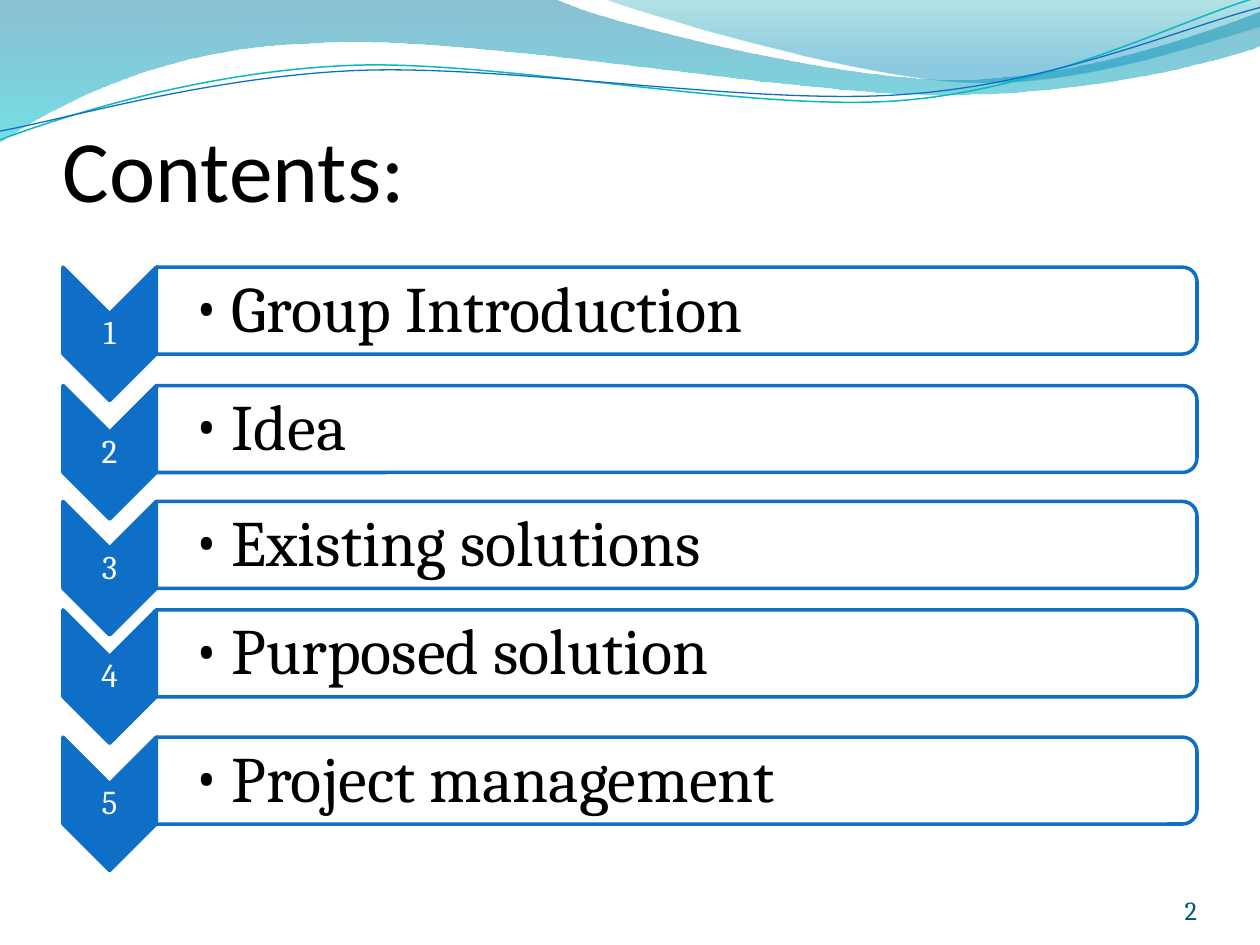
from dataclasses import dataclass

from lxml.etree import SubElement
from pptx import Presentation
from pptx.dml.color import RGBColor
from pptx.enum.shapes import MSO_SHAPE
from pptx.enum.text import MSO_ANCHOR, PP_ALIGN
from pptx.oxml.ns import qn
from pptx.util import Inches, Pt

# Content: each entry with the top of its row in inches
TITLE = "Contents:"
PAGE_NUMBER = "2"
ENTRIES = [
    ("Group Introduction", 2.12),
    ("Idea", 3.06),
    ("Existing solutions", 3.98),
    ("Purposed solution", 4.84),
    ("Project management", 5.85),
]


@dataclass(frozen=True)
class Theme:
    heading_font: str = "Calibri"
    body_font: str = "Cambria"
    blue: str = "0F6FC6"
    teal: str = "0AB8BF"
    white: str = "FFFFFF"
    black: str = "000000"
    footer: str = "045D75"
    title_size: int = 50
    entry_size: int = 37
    number_size: int = 19
    footer_size: int = 15


THEME = Theme()

# Wave outlines in inches: two numbers are a line, six a Bezier curve.
# Gradient stops are position, colour and opacity in percent.
BANDS = [
    ([(0, 0), (4.4, -0.01), (4.76, 0.17, 6.64, 0.63, 7.58, 0.63),
      (8.53, 0.63, 9.58, 0.26, 10, 0.09), (10.01, 0.36),
      (9.83, 0.44, 8.7, 0.76, 7.46, 0.75), (6.22, 0.75, 3.82, 0.28, 2.57, 0.34),
      (1.29, 0.36, 0.46, 0.83, -0.01, 1.13), (0, 0)],
     [(0, "0074A1", 45), (100, "00C6CF", 55)]),
    ([(4.79, -0.01), (5.09, 0.11, 6.82, 0.62, 7.69, 0.65),
      (8.56, 0.69, 9.61, 0.32, 10, 0.21), (10, 0), (4.79, -0.01)],
     [(0, "00A1A9", 30), (80, "008BBF", 45)]),
]
STRANDS = [
    ([(0, 1.11), (0.48, 0.93, 1.58, 0.57, 2.77, 0.52),
      (3.95, 0.47, 5.93, 0.89, 7.13, 0.8), (8.33, 0.71, 9.38, 0.15, 9.98, -0.02)],
     THEME.teal, 0.85),
    ([(0, 1.04), (0.47, 0.96, 1.64, 0.61, 2.83, 0.56),
      (4.03, 0.51, 5.97, 0.84, 7.17, 0.75), (8.36, 0.67, 9.41, 0.21, 10, 0.06)],
     THEME.blue, 0.75),
]

# Grid in inches
LEFT, RIGHT = 0.5, 9.5
NUMBER_WIDTH, CHEVRON_HEIGHT = 0.74, 1.06
BOX_LEFT, BOX_HEIGHT = LEFT + NUMBER_WIDTH, 0.69
BOX_WIDTH = RIGHT - BOX_LEFT


def color(value):
    return RGBColor.from_string(value)


def set_opacity(shape, percents):
    """Give the fill colours of a shape their opacity, in order."""
    for node, percent in zip(shape.element.spPr.iter(qn("a:srgbClr")), percents):
        SubElement(node, qn("a:alpha")).set("val", str(percent * 1000))


def set_line(shape, line_color, width):
    shape.line.color.rgb = color(line_color)
    shape.line.width = Pt(width)


def add_outline(page, outline, close):
    """Join the end points by lines, then bend the lines that have control points."""
    ends = [(Inches(step[-2]), Inches(step[-1])) for step in outline]
    builder = page.shapes.build_freeform(*ends[0])
    builder.add_line_segments(ends[1:], close=close)
    shape = builder.convert_to_shape()
    shape.shadow.inherit = False
    segments = list(shape.element.spPr.iter(qn("a:lnTo")))
    for segment, step in zip(segments, outline[1:]):
        if len(step) == 2:
            continue
        curve = segment.makeelement(qn("a:cubicBezTo"))
        for x, y in zip(step[0::2], step[1::2]):
            point = SubElement(curve, qn("a:pt"))
            point.set("x", str(Inches(x) - shape.left))
            point.set("y", str(Inches(y) - shape.top))
        segment.getparent().replace(segment, curve)
    return shape


def add_turned(page, kind, left, top, width, height, fill):
    """Add a shape turned by 90 degrees that covers the given area."""
    center_x, center_y = left + width / 2, top + height / 2
    shape = page.shapes.add_shape(kind, Inches(center_x - height / 2),
                                  Inches(center_y - width / 2), Inches(height), Inches(width))
    shape.rotation = 90
    shape.shadow.inherit = False
    shape.fill.solid()
    shape.fill.fore_color.rgb = color(fill)
    set_line(shape, THEME.blue, 2)
    return shape


def add_text(page, text, area, *, size, ink, font=THEME.body_font, align=PP_ALIGN.LEFT,
             anchor=MSO_ANCHOR.MIDDLE, insets=(0, 0, 0, 0), spacing=None, bullet_indent=None):
    box = page.shapes.add_textbox(*(Inches(value) for value in area))
    frame = box.text_frame
    frame.word_wrap = True
    frame.vertical_anchor = anchor
    (frame.margin_left, frame.margin_top,
     frame.margin_right, frame.margin_bottom) = (Inches(inset) for inset in insets)
    para = frame.paragraphs[0]
    para.alignment = align
    if spacing:
        para.line_spacing = spacing
    if bullet_indent:
        para.level = 1
        properties = para._p.get_or_add_pPr()
        properties.set("marL", str(Inches(bullet_indent)))
        properties.set("indent", str(-Inches(bullet_indent)))
        SubElement(properties, qn("a:buFont")).set("typeface", font)
        SubElement(properties, qn("a:buChar")).set("char", "••")
    span = para.add_run()
    span.text = text
    span.font.name = font
    span.font.size = Pt(size)
    span.font.color.rgb = color(ink)


def add_waves(page):
    for outline, stops in BANDS:
        band = add_outline(page, outline, close=True)
        band.line.fill.background()
        band.fill.gradient()
        band.fill.gradient_angle = 270
        for stop, (position, stop_color, _) in zip(band.fill.gradient_stops, stops):
            stop.position = position / 100
            stop.color.rgb = color(stop_color)
        set_opacity(band, [opacity for _, _, opacity in stops])
    for outline, line_color, width in STRANDS:
        strand = add_outline(page, outline, close=False)
        strand.fill.background()
        set_line(strand, line_color, width)


def add_entry(page, number, text, top):
    add_turned(page, MSO_SHAPE.CHEVRON, LEFT, top, NUMBER_WIDTH, CHEVRON_HEIGHT, THEME.blue)
    add_text(page, str(number), (LEFT, top + 0.37, NUMBER_WIDTH, 0.32),
             size=THEME.number_size, ink=THEME.white, align=PP_ALIGN.CENTER,
             insets=(0.01,) * 4, spacing=0.9)
    box = add_turned(page, MSO_SHAPE.ROUND_2_SAME_RECTANGLE, BOX_LEFT, top,
                     BOX_WIDTH, BOX_HEIGHT, THEME.white)
    set_opacity(box, [90])
    add_text(page, text, (BOX_LEFT, top + 0.04, BOX_WIDTH - 0.04, 0.62),
             size=THEME.entry_size, ink=THEME.black, insets=(0.29, 0.03, 0.03, 0.03),
             spacing=0.9, bullet_indent=0.31)


def main():
    deck = Presentation()
    deck.slide_width, deck.slide_height = Inches(10), Inches(7.5)
    page = deck.slides.add_slide(deck.slide_layouts[6])

    # Background waves and title
    add_waves(page)
    add_text(page, TITLE, (LEFT, 0.5, RIGHT - LEFT, 1.25), size=THEME.title_size,
             ink=THEME.black, font=THEME.heading_font, anchor=MSO_ANCHOR.BOTTOM,
             insets=(0, 0.05, 0, 0))

    # Numbered rows
    for number, (text, top) in enumerate(ENTRIES, start=1):
        add_entry(page, number, text, top)

    # Page number
    add_text(page, PAGE_NUMBER, (8.67, 6.95, RIGHT - 8.67, 0.4), size=THEME.footer_size,
             ink=THEME.footer, align=PP_ALIGN.RIGHT, anchor=MSO_ANCHOR.BOTTOM)

    deck.save("out.pptx")


if __name__ == "__main__":
    main()
